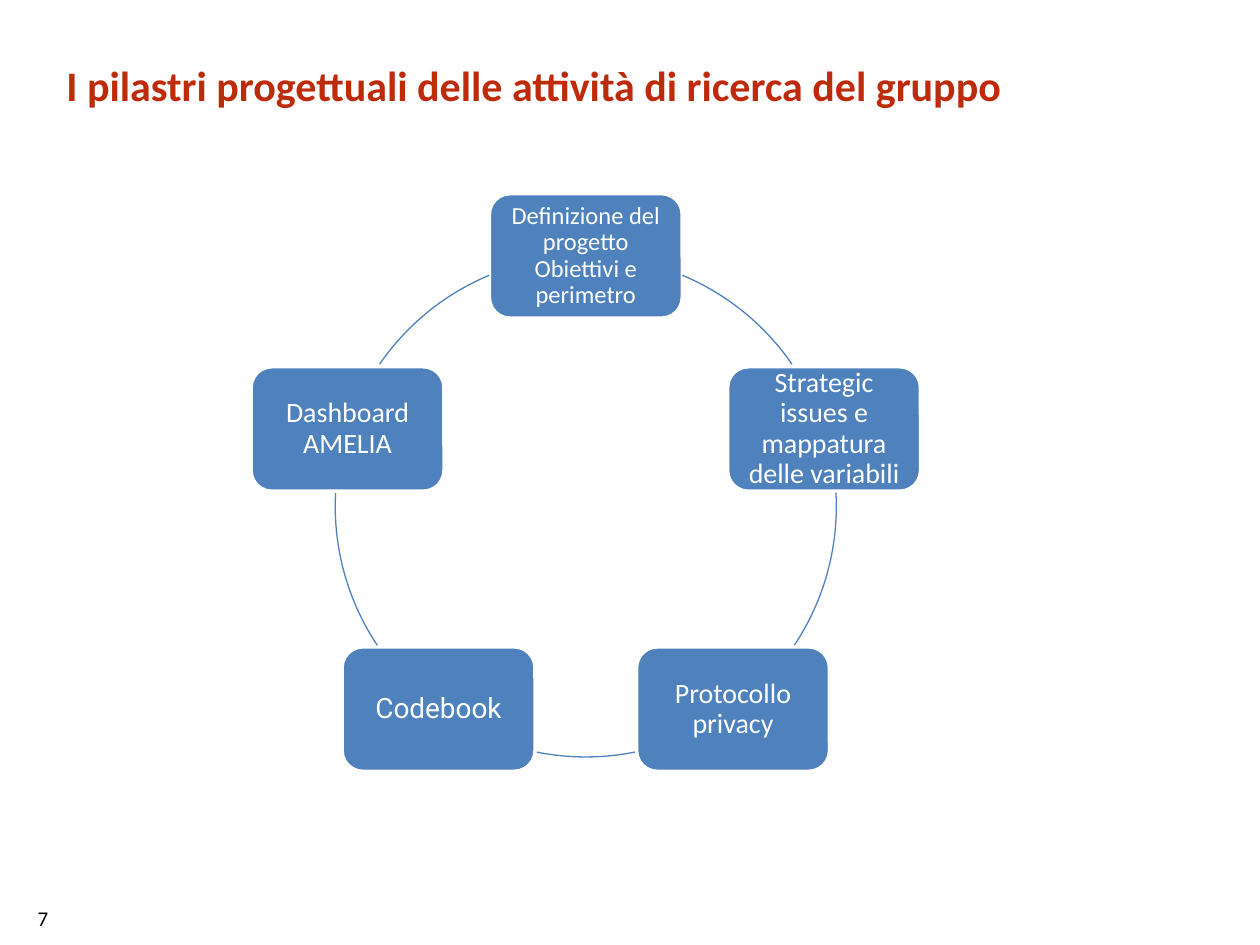
import math
import pptx
import pptx.util
import pptx.dml.color
import pptx.enum.shapes
import pptx.enum.text

Cm, Pt = pptx.util.Cm, pptx.util.Pt
Shape = pptx.enum.shapes.MSO_SHAPE
Align = pptx.enum.text.PP_ALIGN
Anchor = pptx.enum.text.MSO_ANCHOR

BLUE, WHITE, RED, BLACK = "4F81BD", "FFFFFF", "BD2B0B", "000000"
NODE_W, NODE_H = 3.89, 2.51

# Label, size, font; clockwise from the top
NODES = [
    ("Definizione del progetto Obiettivi e perimetro", 14, "Calibri"),
    ("Strategic issues e mappatura delle variabili", 16, "Calibri"),
    ("Protocollo privacy", 16, "Calibri"),
    ("Codebook", 16, "Roboto"),
    ("Dashboard AMELIA", 16, "Calibri"),
]
# Start and end degrees of the arcs between nodes, clockwise from the right
ARCS = [(292.7, 325.4), (356.8, 33.7), (78.7, 101.3),
        (146.3, 183.2), (214.6, 247.3)]


def color(code):
    return pptx.dml.color.RGBColor.from_string(code)


def write(frame, text, size, code, font="Calibri", bold=False):
    frame.word_wrap = True
    para = frame.paragraphs[0]
    para.text = text
    para.font.name = font
    para.font.size = Pt(size)
    para.font.bold = bold
    para.font.color.rgb = color(code)
    return para


def label(slide, box, text, size, code, bold=False):
    """Plain text in the given box."""
    item = slide.shapes.add_textbox(*map(Cm, box))
    return write(item.text_frame, text, size, code, bold=bold)


def node(slide, box, text, size, font):
    """Rounded box with centred text."""
    item = slide.shapes.add_shape(Shape.ROUNDED_RECTANGLE, *map(Cm, box))
    item.shadow.inherit = False
    item.fill.solid()
    item.fill.fore_color.rgb = color(BLUE)
    item.line.color.rgb = color(WHITE)
    item.line.width = Pt(2)
    frame = item.text_frame
    frame.margin_left = frame.margin_right = Cm(0.17)
    frame.margin_top = frame.margin_bottom = Cm(0.17)
    frame.vertical_anchor = Anchor.MIDDLE
    para = write(frame, text, size, WHITE, font)
    para.alignment = Align.CENTER
    para.line_spacing = 0.9


def arc(slide, box, ends):
    """Part of the ring that fills the box."""
    item = slide.shapes.add_shape(Shape.ARC, *map(Cm, box))
    item.shadow.inherit = False
    item.fill.background()
    item.line.color.rgb = color(BLUE)
    item.line.width = Pt(0.75)
    for i, angle in enumerate(ends):
        item.adjustments[i] = angle * 0.6  # 60000 units per degree / 100000


def cycle(slide, box):
    """Nodes spread evenly on the ring inscribed in the box."""
    left, top, width, height = box
    mid_x, mid_y = left + width / 2, top + height / 2
    for i, (entry, ends) in enumerate(zip(NODES, ARCS)):
        turn = math.tau * i / len(NODES)
        x = mid_x + width / 2 * math.sin(turn) - NODE_W / 2
        y = mid_y - height / 2 * math.cos(turn) - NODE_H / 2
        node(slide, (x, y, NODE_W, NODE_H), *entry)
        arc(slide, box, ends)


def main():
    deck = pptx.Presentation()
    deck.slide_width, deck.slide_height = Cm(25.4), Cm(19.05)
    slide = deck.slides.add_slide(deck.slide_layouts[6])

    # Page number
    label(slide, (0.51, 18.14, 2.2, 0.76), "7", 12, BLACK)

    # Title
    title = label(slide, (1.09, 1.32, 23.4, 1.8),
                  "I pilastri progettuali delle attività di ricerca del gruppo",
                  24, RED, bold=True)
    title.line_spacing = Pt(22)

    # Cycle of project pillars
    cycle(slide, (6.76, 5.16, 10.1, 10.1))

    deck.save("out.pptx")


if __name__ == "__main__":
    main()
